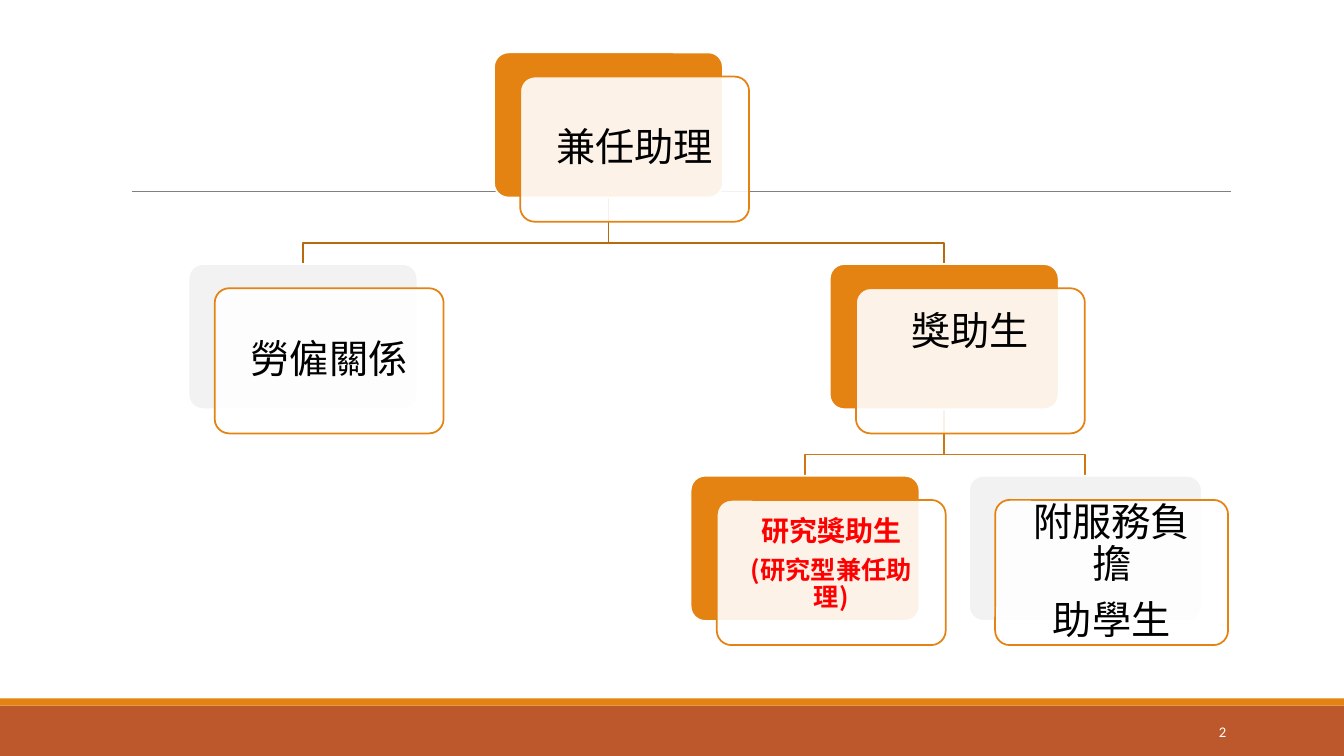
from dataclasses import dataclass

from lxml import etree
from pptx import Presentation
from pptx.dml.color import RGBColor
from pptx.enum.shapes import MSO_CONNECTOR as Connector, MSO_SHAPE as Shape
from pptx.enum.text import MSO_ANCHOR as Anchor, PP_ALIGN as Align
from pptx.oxml.ns import qn
from pptx.util import Inches, Pt

COLOURS = {
    "orange": "E48312", "rust": "BD582C", "pale": "F2F2F2", "white": "FFFFFF",
    "rule": "808080", "upper_link": "B7690E", "lower_link": "CF7710",
    "black": "000000", "red": "FF0000",
}
CJK_FONT = "Noto Sans CJK SC"
CARD_HEIGHT = 1.44
CARD_INSET = 0.16
FRONT_SHIFT = (0.26, 0.24)
BUS_GAP = 0.21


@dataclass
class Card:
    """One node of the tree: a coloured back plate and a framed front plate."""
    left: float
    top: float
    lines: list
    fill: str = "orange"
    width: float = 2.27
    colour: str = "black"
    bold: bool = False
    lift: float = 0

    @property
    def middle(self):
        """Return the horizontal centre of the back plate."""
        return self.left + self.width / 2


def colour(name):
    """Return the named colour."""
    return RGBColor.from_string(COLOURS[name])


def add_box(page, shape, left, top, width, height, fill, line=None):
    """Add a filled preset shape without a shadow."""
    box = page.shapes.add_shape(
        shape, Inches(left), Inches(top), Inches(width), Inches(height))
    box.shadow.inherit = False
    box.fill.solid()
    box.fill.fore_color.rgb = colour(fill)
    if line:
        box.line.color.rgb = colour(line)
        box.line.width = Pt(1.25)
    else:
        box.line.fill.background()
    return box


def add_plate(page, left, top, width, fill, line):
    """Add a rounded plate of a card."""
    plate = add_box(page, Shape.ROUNDED_RECTANGLE, left, top, width,
                    CARD_HEIGHT, fill, line)
    plate.adjustments[0] = 0.1
    return plate


def set_opacity(box, percent):
    """Make the solid fill of a box partly transparent."""
    solid = box._element.spPr.find(qn("a:solidFill"))
    etree.SubElement(solid[0], qn("a:alpha"), val=str(percent * 1000))


def style(para, size, name, typeface, bold=False):
    """Set the font of a paragraph for Latin and East Asian text."""
    font = para.font
    font.size, font.bold, font.name = Pt(size), bold, typeface
    font.color.rgb = colour(name)
    etree.SubElement(font._element, qn("a:ea"), typeface=typeface)


def add_card(page, card):
    """Add both plates of a card and its text."""
    add_plate(page, card.left, card.top, card.width, card.fill, "white")
    front = add_plate(page, card.left + FRONT_SHIFT[0],
                      card.top + FRONT_SHIFT[1], card.width, "white", "orange")
    set_opacity(front, 90)
    frame = front.text_frame
    frame.word_wrap = True
    frame.vertical_anchor = Anchor.MIDDLE
    frame.margin_left = frame.margin_right = frame.margin_top = Inches(CARD_INSET)
    frame.margin_bottom = Inches(CARD_INSET + card.lift)
    for index, (text, size) in enumerate(card.lines):
        para = frame.add_paragraph() if index else frame.paragraphs[0]
        para.text = text
        para.alignment = Align.CENTER
        para.line_spacing = 0.9
        para.space_after = Pt(0.35 * size)
        style(para, size, card.colour, CJK_FONT, card.bold)


def add_link(page, parent, child, name):
    """Add the bent line from a parent card down to a child card."""
    bus = child.top - BUS_GAP
    start, *bends = [(Inches(x), Inches(y)) for x, y in (
        (parent.middle, parent.top + CARD_HEIGHT), (parent.middle, bus),
        (child.middle, bus), (child.middle, child.top))]
    builder = page.shapes.build_freeform(*start)
    builder.add_line_segments(bends, close=False)
    link = builder.convert_to_shape()
    link.shadow.inherit = False
    link.fill.background()
    link.line.color.rgb = colour(name)
    link.line.width = Pt(1.25)


def add_rule(page):
    """Add the thin grey line across the page."""
    rule = page.shapes.add_connector(
        Connector.STRAIGHT, Inches(1.31), Inches(1.9), Inches(12.21), Inches(1.9))
    rule.line.color.rgb = colour("rule")
    rule.line.width = Pt(0.5)
    etree.SubElement(rule._element.spPr, qn("a:effectLst"))


def add_page_number(page, number):
    """Add the page number in the footer."""
    box = page.shapes.add_textbox(
        Inches(10.83), Inches(7.06), Inches(1.43), Inches(0.4))
    frame = box.text_frame
    frame.word_wrap = True
    frame.vertical_anchor = Anchor.MIDDLE
    para = frame.paragraphs[0]
    para.text = number
    para.alignment = Align.RIGHT
    style(para, 10.5, "white", "Calibri")


def main():
    """Build the slide and save it."""
    deck = Presentation()
    deck.slide_width, deck.slide_height = Inches(13.33), Inches(7.5)
    page = deck.slides.add_slide(deck.slide_layouts[6])

    add_box(page, Shape.RECTANGLE, 0, 7, 13.33, 0.5, "rust")
    add_box(page, Shape.RECTANGLE, 0, 6.93, 13.33, 0.07, "orange")
    add_rule(page)

    assistant = Card(4.9, 0.52, [("兼任助理", 28)])
    employed = Card(1.87, 2.62, [("勞僱關係", 28)], fill="pale")
    funded = Card(8.23, 2.62, [("獎助生", 28)], lift=0.55)
    research = Card(6.85, 4.72, [("研究獎助生", 20), ("(研究型兼任助理)", 18)],
                    colour="red", bold=True, lift=0.16)
    service = Card(9.61, 4.72, [("附服務負擔", 28), ("助學生", 28)],
                   fill="pale", width=2.31)

    for parent, children, name in (
            (funded, (service, research), "lower_link"),
            (assistant, (funded, employed), "upper_link")):
        for child in children:
            add_link(page, parent, child, name)
    for card in (assistant, employed, funded, research, service):
        add_card(page, card)
    add_page_number(page, "2")
    deck.save("out.pptx")


if __name__ == "__main__":
    main()
